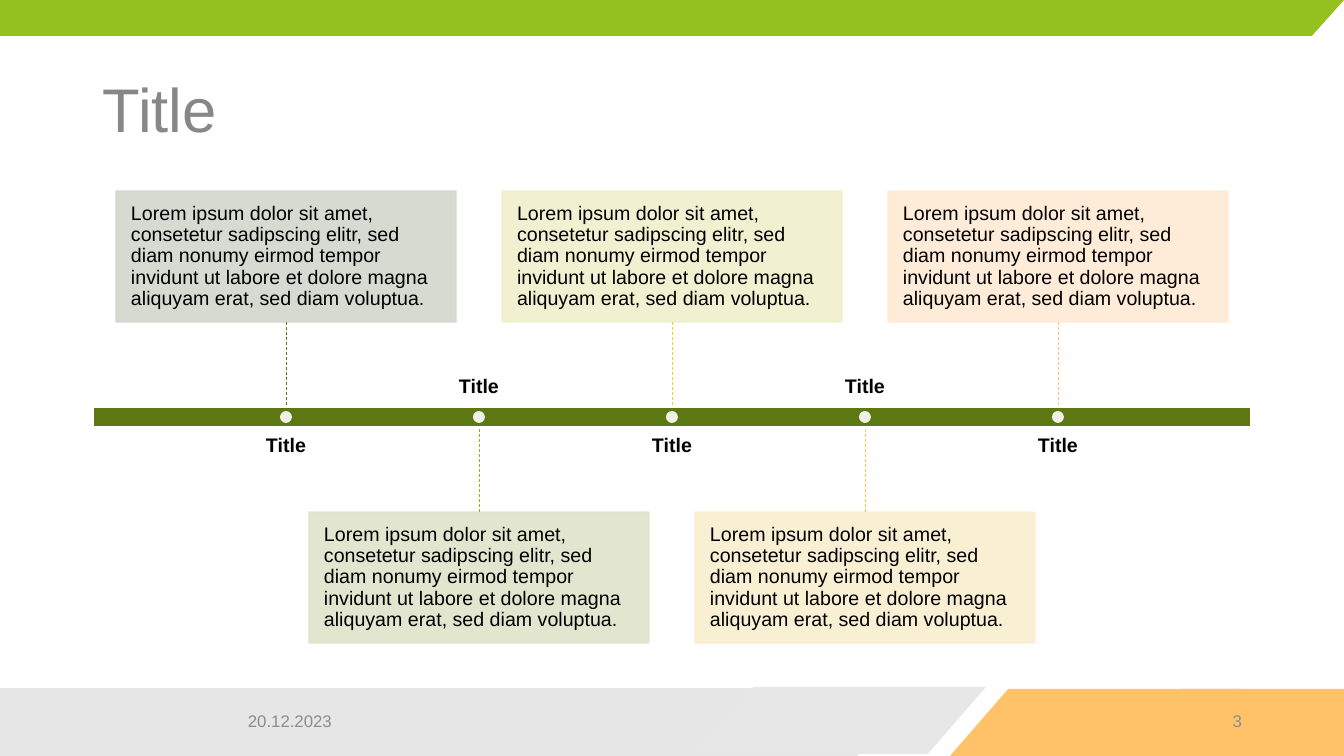
import pptx
import pptx.util
import pptx.dml.color
import pptx.enum.dml
import pptx.enum.shapes
import pptx.enum.text
import pptx.oxml
import pptx.oxml.ns
from dataclasses import dataclass

SHAPE = pptx.enum.shapes.MSO_SHAPE
ALIGN = pptx.enum.text.PP_ALIGN
ANCHOR = pptx.enum.text.MSO_ANCHOR

LOREM = ("Lorem ipsum dolor sit amet, consetetur sadipscing elitr, sed diam nonumy "
         "eirmod tempor invidunt ut labore et dolore magna aliquyam erat, "
         "sed diam voluptua.")

# title, text, card colour, connector colour; cards alternate above and below
MILESTONES = [
    ("Title", LOREM, "D2D6CC", "5D7713"),
    ("Title", LOREM, "DFE4CA", "9FAE14"),
    ("Title", LOREM, "F0EFCB", "E8D811"),
    ("Title", LOREM, "F9EECE", "F8CA39"),
    ("Title", LOREM, "FFEAD4", "FFC269"),
]


@dataclass(frozen=True)
class Theme:
    font: str = "Arial"
    title: str = "878787"
    footer: str = "8C8C8C"
    text: str = "000000"
    white: str = "FFFFFF"
    green: str = "95C11F"
    bar: str = "5D7713"
    grey: str = "E7E6E6"
    grey_tip: str = "E7E7E7"
    orange: str = "FFC269"
    title_size: int = 44
    body_size: int = 14
    footer_size: int = 12
    opacity: int = 90


THEME = Theme()


def px(n):
    """Convert px to EMU at 100.8 px to the inch."""
    return pptx.util.Emu(round(n * 914400 / 100.8))


def rgb(color):
    return pptx.dml.color.RGBColor.from_string(color)


def set_opacity(fill, percent):
    """Make a solid fill partly transparent."""
    color = fill._xPr.find(pptx.oxml.ns.qn("a:solidFill"))[0]
    alpha = color.makeelement(pptx.oxml.ns.qn("a:alpha"), {"val": str(percent * 1000)})
    color.append(alpha)


def add_block(slide, preset, box, color, line=None, opacity=100):
    sp = slide.shapes.add_shape(preset, *map(px, box))
    sp.shadow.inherit = False
    sp.fill.solid()
    sp.fill.fore_color.rgb = rgb(color)
    fills = [sp.fill]
    if line:
        sp.line.color.rgb = rgb(line)
        sp.line.width = pptx.util.Pt(1)
        fills.append(sp.line.fill)
    else:
        sp.line.fill.background()
    if opacity < 100:
        for fill in fills:
            set_opacity(fill, opacity)
    return sp


def write(sp, text, size, color, align=ALIGN.LEFT, anchor=ANCHOR.MIDDLE,
          bold=False, inset=None, spacing=None):
    tf = sp.text_frame
    tf.word_wrap = True
    tf.vertical_anchor = anchor
    if inset is not None:
        tf.margin_left = tf.margin_top = tf.margin_right = tf.margin_bottom = px(inset)
    tf.text = text
    p = tf.paragraphs[0]
    p.alignment = align
    if spacing:
        p.line_spacing = spacing
    font = p.runs[0].font
    font.name = THEME.font
    font.size = pptx.util.Pt(size)
    font.bold = bold
    font.color.rgb = rgb(color)


def add_text(slide, box, *args, **kwargs):
    write(slide.shapes.add_textbox(*map(px, box)), *args, **kwargs)


def add_dashed_line(slide, x, y1, y2, color):
    line = slide.shapes.add_connector(pptx.enum.shapes.MSO_CONNECTOR.STRAIGHT,
                                      px(x), px(y1), px(x), px(y2))
    line.line.color.rgb = rgb(color)
    line.line.width = pptx.util.Pt(0.5)
    line.line.dash_style = pptx.enum.dml.MSO_LINE.DASH
    pr = line._element.spPr
    pr.append(pr.makeelement(pptx.oxml.ns.qn("a:effectLst"), {}))
    return line


def add_header(slide, box):
    left, top, width, height = box
    tip = 161
    tip_left = left + width - tip
    add_block(slide, SHAPE.RECTANGLE, (left, top, tip_left + 34 - left, height), THEME.green)
    add_block(slide, SHAPE.FLOWCHART_DATA, (tip_left, top, tip, height), THEME.green)


def add_footer(slide, box, date, number):
    left, top, width, height = box
    tip, orange_left = 291, left + 950
    add_block(slide, SHAPE.FLOWCHART_DATA, (orange_left, top + 2, tip, height - 2), THEME.orange)
    add_block(slide, SHAPE.RECTANGLE,
              (left + 1180, top + 2, width - 1180, height - 2), THEME.orange)
    add_block(slide, SHAPE.RECTANGLE, (left, top + 1, 858, height - 1), THEME.grey)
    add_block(slide, SHAPE.FLOWCHART_DATA, (left + 695, top, tip, height - 2), THEME.grey_tip)
    add_text(slide, (left + 238, top + 14, 156, 40), date, THEME.footer_size, THEME.footer)
    add_text(slide, (orange_left, top + 14, 302, 40), number, THEME.footer_size,
             THEME.footer, ALIGN.RIGHT)


def add_milestone(slide, bar, bar_box, x, above, milestone):
    """Place one card, its connector and its label around the bar at x."""
    title, text, card_color, line_color = milestone
    left, top, width, height = bar_box
    card_w, card_h, reach = 340, 131, 85
    label_w, label_h, label_gap = 308, 56, 9
    bottom = top + height
    if above:
        card_top, bar_edge, card_edge = top - reach - card_h, top, top - reach
        label_top, label_anchor = bottom + label_gap, ANCHOR.TOP
        card_side, bar_side = 2, 0
    else:
        card_top, bar_edge, card_edge = bottom + reach, bottom, bottom + reach
        label_top, label_anchor = top - label_gap - label_h, ANCHOR.BOTTOM
        card_side, bar_side = 0, 2

    add_text(slide, (x - label_w // 2, label_top, label_w, label_h), title,
             THEME.body_size, THEME.text, ALIGN.CENTER, label_anchor,
             bold=True, inset=0, spacing=0.9)
    card = add_block(slide, SHAPE.RECTANGLE, (x - card_w // 2, card_top, card_w, card_h),
                     card_color, line=card_color, opacity=THEME.opacity)
    write(card, text, THEME.body_size, THEME.text, inset=15, spacing=0.9)
    line = add_dashed_line(slide, x, card_edge, bar_edge, line_color)
    line.begin_connect(card, card_side)
    if x == left + width // 2:
        line.end_connect(bar, bar_side)
    dot = 12
    add_block(slide, SHAPE.OVAL, (x - dot // 2, top + (height - dot) // 2, dot, dot),
              THEME.white, opacity=THEME.opacity)


def add_timeline(slide, bar_box, milestones):
    left, width = bar_box[0], bar_box[2]
    bar = add_block(slide, SHAPE.RECTANGLE, bar_box, THEME.bar, line=THEME.white)
    step = width // (len(milestones) + 1)
    for i, milestone in enumerate(milestones):
        add_milestone(slide, bar, bar_box, left + step * (i + 1), i % 2 == 0, milestone)


def main():
    prs = pptx.Presentation()
    prs.slide_width, prs.slide_height = px(1344), px(756)
    slide = prs.slides.add_slide(prs.slide_layouts[6])
    add_footer(slide, (0, 687, 1344, 69), "20.12.2023", "3")
    add_header(slide, (0, 0, 1344, 36))
    add_text(slide, (93, 40, 1158, 146), "Title", THEME.title_size, THEME.title, spacing=0.9)
    add_timeline(slide, (93, 407, 1158, 20), MILESTONES)
    prs.save("out.pptx")


if __name__ == "__main__":
    main()
